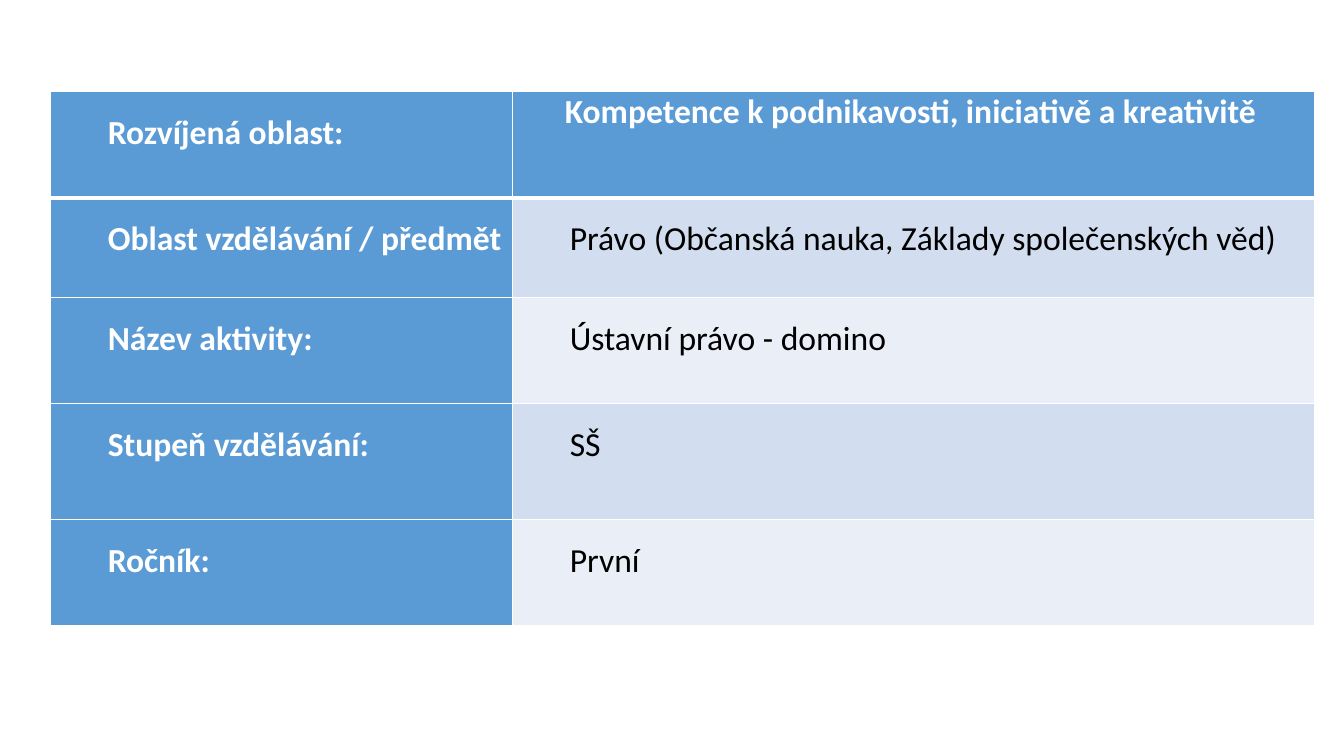
from lxml import etree
from pptx import Presentation
from pptx.dml.color import RGBColor
from pptx.oxml.ns import qn
from pptx.util import Pt

WHITE, BLACK, BLUE = "FFFFFF", "000000", "5B9BD5"
BANDS = ("EAEFF7", "D2DEEF")
COLS = (330, 573)
ROWS = (
    (75.7, "Rozvíjená oblast:", "Kompetence k\u00a0podnikavosti, iniciativě a kreativitě"),
    (71.6, "Oblast vzdělávání / předmět", "Právo (Občanská nauka, Základy společenských věd)"),
    (75.7, "Název aktivity:", "Ústavní právo - domino"),
    (82.8, "Stupeň vzdělávání:", "SŠ"),
    (75.7, "Ročník:", "První"),
)


def color(code):
    return RGBColor.from_string(code)


def apply(item, values):
    for name, value in values.items():
        setattr(item, name, value)


def border(cell, widths):
    props = cell._tc.get_or_add_tcPr()
    for side, width in widths.items():
        line = etree.SubElement(props, qn("a:ln" + side), w=str(Pt(width)))
        fill = etree.SubElement(line, qn("a:solidFill"))
        etree.SubElement(fill, qn("a:srgbClr"), val=WHITE)


def fill_cell(cell, text, row, col):
    head = row == 0
    bold = head or col == 0
    apply(cell, {"margin_left": Pt(5), "margin_right": Pt(5),
                 "margin_top": 0, "margin_bottom": 0})
    border(cell, {"L": 1, "R": 1, "T": 3 if row == 1 else 1, "B": 3 if head else 1})
    cell.fill.solid()
    cell.fill.fore_color.rgb = color(BLUE if bold else BANDS[row % 2])
    para = cell.text_frame.paragraphs[0]
    title = head and col == 1
    para._p.get_or_add_pPr().set("marL", str(Pt(32.5 if title else 36)))
    para.line_spacing = 1.0 if title else 1.5
    run = para.add_run()
    run.text = text
    apply(run.font, {"name": "Calibri", "size": Pt(24), "bold": bold})
    run.font.color.rgb = color(WHITE if bold else BLACK)


def add_grid(slide, left, top):
    height = sum(row[0] for row in ROWS)
    frame = slide.shapes.add_table(len(ROWS), len(COLS), Pt(left), Pt(top),
                                   Pt(sum(COLS)), Pt(height))
    table = frame.table
    apply(table, {"first_row": True, "first_col": True, "horz_banding": False})
    for col, width in enumerate(COLS):
        table.columns[col].width = Pt(width)
    for row, (height, *texts) in enumerate(ROWS):
        table.rows[row].height = Pt(height)
        for col, text in enumerate(texts):
            fill_cell(table.cell(row, col), text, row, col)


def main():
    deck = Presentation()
    apply(deck, {"slide_width": Pt(960), "slide_height": Pt(540)})
    slide = deck.slides.add_slide(deck.slide_layouts[6])
    add_grid(slide, 36, 65.5)
    deck.save("out.pptx")


if __name__ == "__main__":
    main()
